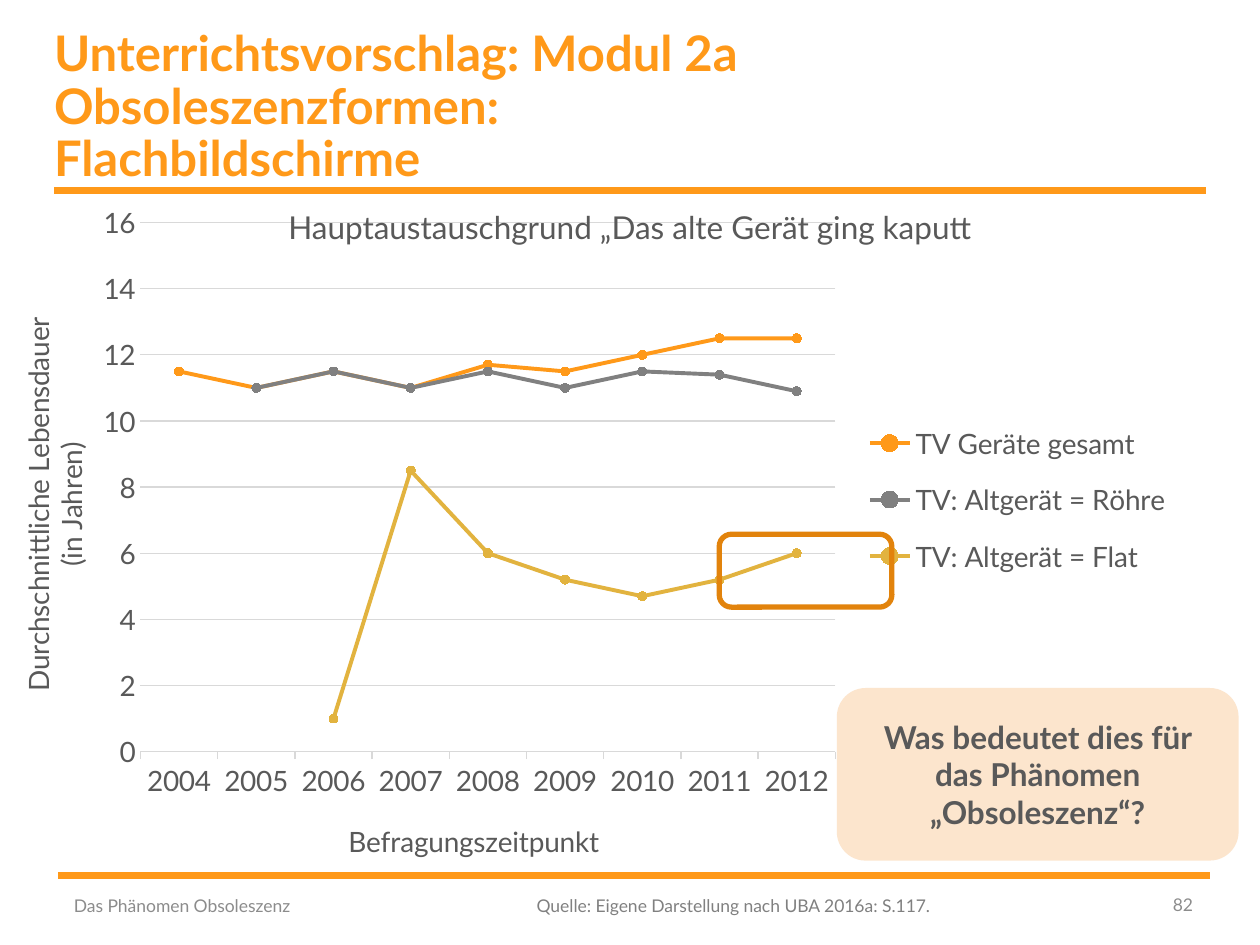
import pptx
import pptx.chart.data
import pptx.dml.color
import pptx.enum.chart
import pptx.enum.shapes
import pptx.enum.text
import pptx.oxml
import pptx.oxml.ns
import pptx.util

Cm, Pt = pptx.util.Cm, pptx.util.Pt
qn = pptx.oxml.ns.qn
kinds = pptx.enum.chart
shapes = pptx.enum.shapes
align = pptx.enum.text.PP_ALIGN
anchor = pptx.enum.text.MSO_ANCHOR

theme = {
    "font": "Lato",
    "main": "FF9919", "gray": "808080", "gold": "E2B33F",
    "text": "595959", "foot": "8C8C8C", "grid": "D9D9D9",
    "mark": "E2830C", "pale": "FCE5CD",
    "head": 28, "body": 18, "axis": 16, "small": 10,
}

# Content
years = [str(year) for year in range(2004, 2013)]
series = [
    ("TV Geräte gesamt", "main", [11.5, 11, 11.5, 11, 11.7, 11.5, 12, 12.5, 12.5]),
    ("TV: Altgerät = Röhre", "gray", [None, 11, 11.5, 11, 11.5, 11, 11.5, 11.4, 10.9]),
    ("TV: Altgerät = Flat", "gold", [None, None, 1, 8.5, 6, 5.2, 4.7, 5.2, 6]),
]
head = "Unterrichtsvorschlag: Modul 2a\vObsoleszenzformen:\vFlachbildschirme"
claim = "Hauptaustauschgrund „Das alte Gerät ging kaputt"
ask = "Was bedeutet dies für das Phänomen „Obsoleszenz“?"
# text, place in cm, colour, alignment, side inset in cm
foots = [
    ("Quelle: Eigene Darstellung nach UBA 2016a: S.117.",
     (10.82, 17.75, 9.32, 1.02), "gray", align.LEFT, 0),
    ("Das Phänomen Obsoleszenz", (1.24, 17.75, 8.59, 1.02), "foot", align.LEFT, 0.25),
    ("82", (22.78, 17.73, 1.52, 1.02), "foot", align.RIGHT, 0.25),
]
rules = [(1.09, 3.84), (1.17, 17.65)]
width = 23.22


def tint(name):
    return pptx.dml.color.RGBColor.from_string(theme[name])


def style(font, size, color, bold=False):
    font.name = theme["font"]
    font.size = Pt(theme[size])
    font.bold = bold
    font.color.rgb = tint(color)


def stroke(line, color, weight):
    line.color.rgb = tint(color)
    line.width = Pt(weight)


def write(frame, text, size, color, side=align.LEFT, bold=False):
    frame.word_wrap = True
    para = frame.paragraphs[0]
    para.text = text
    para.alignment = side
    for run in para.runs:
        style(run.font, size, color, bold)
    return para


def label(place, inset=0, middle=False):
    frame = slide.shapes.add_textbox(*map(Cm, place)).text_frame
    frame.margin_left = frame.margin_right = Cm(inset)
    frame.margin_top = frame.margin_bottom = 0
    frame.vertical_anchor = anchor.MIDDLE if middle else anchor.TOP
    return frame


def panel(place):
    shape = slide.shapes.add_shape(
        shapes.MSO_SHAPE.ROUNDED_RECTANGLE, *map(Cm, place))
    shape.shadow.inherit = False
    return shape


def layout(node, inner=False, **parts):
    """Fix a chart part at fractions of the chart area."""
    for old in node.findall(qn("c:layout")):
        node.remove(old)
    tags = '<c:layoutTarget val="inner"/>' if inner else ""
    tags += "".join(f'<c:{key}Mode val="edge"/>' for key in "xy")
    tags += "".join(f'<c:{key} val="{val}"/>' for key, val in parts.items())
    space = pptx.oxml.ns.nsdecls("c")
    item = pptx.oxml.parse_xml(
        f"<c:layout {space}><c:manualLayout>{tags}</c:manualLayout></c:layout>")
    over = node.find(qn("c:overlay"))
    if over is None:
        node.insert(0, item)
    else:
        over.addprevious(item)


def name_axis(axis, text, x, y):
    title = axis.axis_title
    title.text_frame.text = text
    for para in title.text_frame.paragraphs:
        for run in para.runs:
            style(run.font, "axis", "text")
    layout(title._element, x=x, y=y)


deck = pptx.Presentation()
deck.slide_width, deck.slide_height = Cm(25.4), Cm(19.05)
slide = deck.slides.add_slide(deck.slide_layouts[6])

# Rules above and below the content
for left, top in rules:
    rule = slide.shapes.add_connector(
        shapes.MSO_CONNECTOR.STRAIGHT, Cm(left), Cm(top), Cm(left + width), Cm(top))
    stroke(rule.line, "main", 4)
    rule._element.spPr.append(pptx.oxml.parse_xml(
        f"<a:effectLst {pptx.oxml.ns.nsdecls('a')}/>"))

# Line chart
data = pptx.chart.data.CategoryChartData()
data.categories = years
for name, _, vals in series:
    data.add_series(name, vals)
chart = slide.shapes.add_chart(
    kinds.XL_CHART_TYPE.LINE_MARKERS,
    Cm(-0.18), Cm(3.96), Cm(24.49), Cm(13.89), data).chart
style(chart.font, "axis", "text")
chart.has_title = False
plot = chart.plots[0]
plot.vary_by_categories = False
for row, (_, color, _) in zip(plot.series, series):
    row.smooth = False
    stroke(row.format.line, color, 2.25)
    row.marker.style = kinds.XL_MARKER_STYLE.CIRCLE
    row.marker.size = 5
    row.marker.format.fill.solid()
    row.marker.format.fill.fore_color.rgb = tint(color)
    stroke(row.marker.format.line, color, 0.75)
layout(chart._chartSpace.chart.plotArea, inner=True, x=0.123, y=0.038, w=0.572, h=0.768)

# Axes
cats, vals = chart.category_axis, chart.value_axis
cats.major_tick_mark = kinds.XL_TICK_MARK.OUTSIDE
stroke(cats.format.line, "grid", 0.75)
vals.major_tick_mark = kinds.XL_TICK_MARK.NONE
vals.minimum_scale, vals.maximum_scale, vals.major_unit = 0, 16, 2
vals.format.line.fill.background()
stroke(vals.major_gridlines.format.line, "grid", 0.75)
for axis in (cats, vals):
    style(axis.tick_labels.font, "axis", "text")
name_axis(cats, "Befragungszeitpunkt", 0.29, 0.9)
name_axis(vals, "Durchschnittliche Lebensdauer\n(in Jahren)", 0.02, 0.17)

# Legend
chart.has_legend = True
legend = chart.legend
legend.position = kinds.XL_LEGEND_POSITION.RIGHT
legend.include_in_layout = False
style(legend.font, "axis", "text")
layout(legend._element, x=0.71, y=0.3, w=0.27, h=0.28)

# Title and claim
para = write(label((1.09, 0.58, 18.54, 2.97)), head, "head", "main", bold=True)
para.line_spacing = 0.9
write(label((1.09, 4.19, width, 13)), claim, "body", "text", align.CENTER)

# Footer
for text, place, color, side, inset in foots:
    write(label(place, inset, True), text, "small", color, side)

# Frame around the last values
frame = panel((14.5, 10.77, 3.48, 1.47))
frame.fill.background()
stroke(frame.line, "mark", 3)

# Question
box = panel((16.87, 13.87, 8.1, 3.48))
box.fill.solid()
box.fill.fore_color.rgb = tint("pale")
box.line.fill.background()
box.text_frame.vertical_anchor = anchor.MIDDLE
write(box.text_frame, ask, "body", "text", align.CENTER, True)

deck.save("out.pptx")
